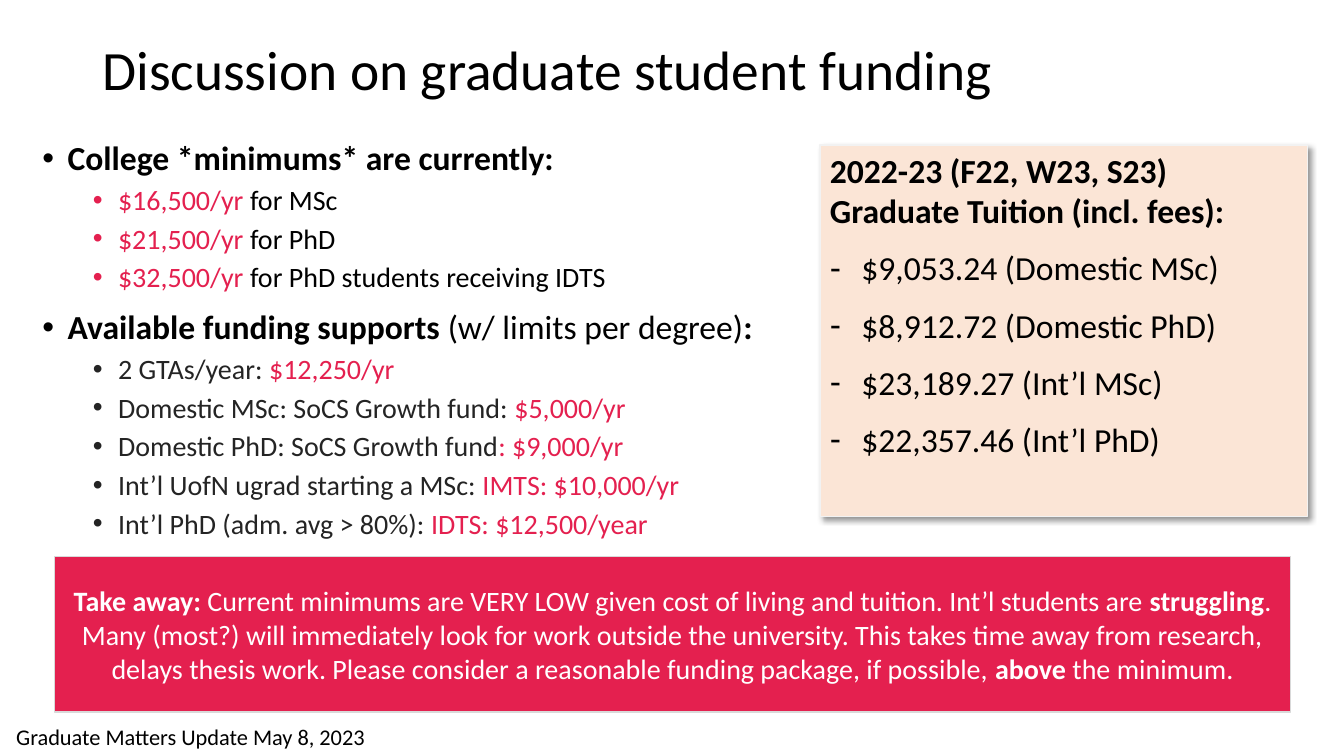
from lxml.etree import SubElement
from pptx import Presentation
from pptx.dml.color import RGBColor
from pptx.enum.shapes import MSO_SHAPE as Preset
from pptx.enum.text import MSO_ANCHOR as Anchor, PP_ALIGN as Align
from pptx.oxml.ns import qn
from pptx.util import Emu, Pt

EMU_PER_PX = 9525
FONT = "Calibri"
BLACK, WHITE, CRIMSON, CHARCOAL = "000000", "FFFFFF", "E4204F", "242424"
PEACH, PALE_GREY, LIGHT_GREY = "FBE5D6", "F2F2F2", "D9D9D9"

MINIMUMS = [
    ("$16,500/yr", " for MSc"),
    ("$21,500/yr", " for PhD"),
    ("$32,500/yr", " for PhD students receiving IDTS"),
]
SUPPORTS = [
    ("2 GTAs/year: ", "$12,250/yr"),
    ("Domestic MSc: SoCS Growth fund: ", "$5,000/yr"),
    ("Domestic PhD: SoCS Growth fund", ": $9,000/yr"),
    ("Int’l UofN ugrad starting a MSc: ", "IMTS: $10,000/yr"),
    ("Int’l PhD (adm. avg > 80%): ", "IDTS: $12,500/year"),
]
TUITION = [
    "$9,053.24 (Domestic MSc)",
    "$8,912.72 (Domestic PhD)",
    "$23,189.27 (Int’l MSc)",
    "$22,357.46 (Int’l PhD)",
]
TAKE_AWAY = [
    ("Take away: ", WHITE, True),
    ("Current minimums are VERY LOW given cost of living and tuition. "
     "Int’l students are ", WHITE, False),
    ("struggling", WHITE, True),
    (". Many (most?) will immediately look for work outside the university. "
     "This takes time away from research, delays thesis work. Please consider "
     "a reasonable funding package, if possible, ", WHITE, False),
    ("above ", WHITE, True),
    ("the minimum.", WHITE, False),
]


def px(length):
    return Emu(length * EMU_PER_PX)


def color(value):
    return RGBColor.from_string(value)


def add_text_box(slide, left, top, width, height, anchor=Anchor.TOP):
    shape = slide.shapes.add_textbox(px(left), px(top), px(width), px(height))
    shape.text_frame.word_wrap = True
    shape.text_frame.vertical_anchor = anchor
    return shape.text_frame


def add_panel(slide, left, top, width, height, fill, line, anchor):
    shape = slide.shapes.add_shape(
        Preset.RECTANGLE, px(left), px(top), px(width), px(height))
    shape.shadow.inherit = False
    shape.fill.solid()
    shape.fill.fore_color.rgb = color(fill)
    shape.line.color.rgb = color(line)
    shape.line.width = Pt(1)
    shape.text_frame.word_wrap = True
    shape.text_frame.vertical_anchor = anchor
    return shape


def add_drop_shadow(shape):
    effects = shape.element.spPr.find(qn("a:effectLst"))
    shadow = SubElement(effects, qn("a:outerShdw"), blurRad=str(Pt(4)),
                        dist=str(Pt(3)), dir="2700000", algn="tl", rotWithShape="0")
    shade = SubElement(shadow, qn("a:srgbClr"), val=BLACK)
    SubElement(shade, qn("a:alpha"), val="40000")


def add_paragraph(frame, runs, size, before=0, after=0, line_spacing=1.0,
                  align=Align.LEFT):
    first = frame.paragraphs[0]
    paragraph = frame.add_paragraph() if first.runs else first
    paragraph.alignment = align
    paragraph.line_spacing = line_spacing
    paragraph.space_before = Pt(before)
    paragraph.space_after = Pt(after)
    for text, text_color, bold in runs:
        run = paragraph.add_run()
        run.text = text
        run.font.name = FONT
        run.font.size = Pt(size)
        run.font.bold = bold
        run.font.color.rgb = color(text_color)
    return paragraph


def add_bullet(paragraph, symbol, margin, hanging):
    properties = paragraph._p.get_or_add_pPr()
    properties.set("marL", str(px(margin)))
    properties.set("indent", str(px(-hanging)))
    SubElement(properties, qn("a:buFont"), typeface="Arial")
    SubElement(properties, qn("a:buChar"), char=symbol)


def add_topic(frame, heading, items, item_colors):
    paragraph = add_paragraph(frame, heading, 24, 6, 6, 0.9)
    add_bullet(paragraph, "•", 24, 24)
    for texts in items:
        runs = [(text, shade, False) for text, shade in zip(texts, item_colors)]
        paragraph = add_paragraph(frame, runs, 20, 0, 6, 0.9)
        paragraph.level = 1
        add_bullet(paragraph, "•", 72, 24)


def add_tuition(slide):
    panel = add_panel(slide, 781, 138, 464, 354, PEACH, PALE_GREY, Anchor.TOP)
    add_drop_shadow(panel)
    heading = "2022-23 (F22, W23, S23) Graduate Tuition (incl. fees):"
    add_paragraph(panel.text_frame, [(heading, BLACK, True)], 24, 6, 6)
    for fee in TUITION:
        paragraph = add_paragraph(panel.text_frame, [(fee, BLACK, False)], 24, 6, 6)
        add_bullet(paragraph, "-", 30, 30)


def main():
    presentation = Presentation()
    presentation.slide_width = px(1280)
    presentation.slide_height = px(720)
    slide = presentation.slides.add_slide(presentation.slide_layouts[6])

    title = add_text_box(slide, 88, 38, 1104, 63, Anchor.MIDDLE)
    add_paragraph(title, [("Discussion on graduate student funding", BLACK, False)],
                  39.6, line_spacing=0.9)

    body = add_text_box(slide, 31, 130, 713, 470)
    add_topic(body, [("College *minimums* are currently:", BLACK, True)],
              MINIMUMS, (CRIMSON, BLACK))
    add_topic(body, [("Available funding supports ", BLACK, True),
                     ("(w/ limits per degree)", BLACK, False),
                     (":", BLACK, True)],
              SUPPORTS, (CHARCOAL, CRIMSON))

    add_tuition(slide)

    banner = add_panel(slide, 52, 530, 1177, 148, CRIMSON, LIGHT_GREY, Anchor.MIDDLE)
    add_paragraph(banner.text_frame, TAKE_AWAY, 20, align=Align.CENTER)

    footer = add_text_box(slide, 6, 684, 405, 36)
    add_paragraph(footer, [("Graduate Matters Update May 8, 2023", BLACK, False)], 16)

    presentation.save("out.pptx")


if __name__ == "__main__":
    main()
